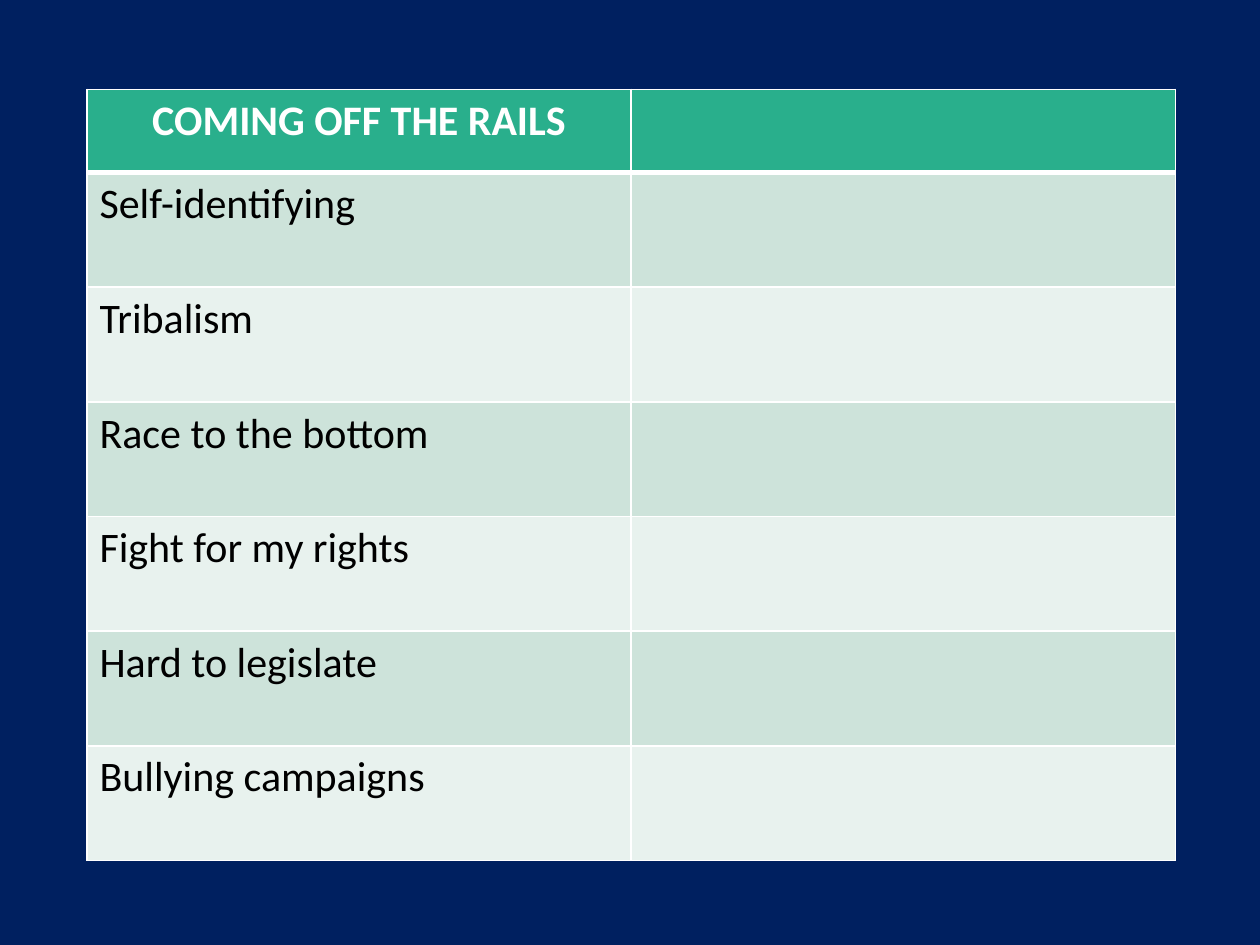
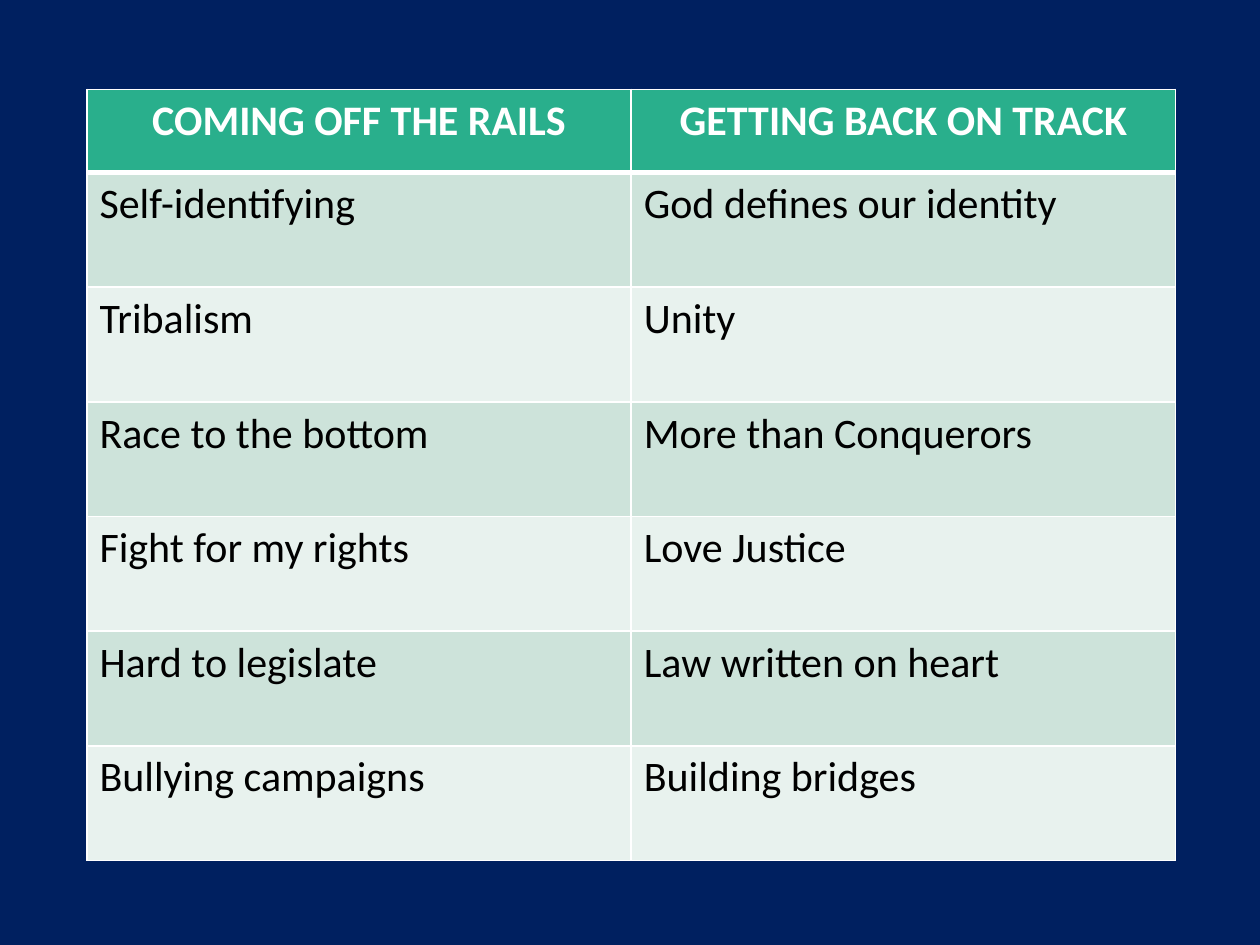
from lxml import etree
from pptx import Presentation
from pptx.dml.color import RGBColor
from pptx.enum.text import PP_ALIGN
from pptx.oxml.ns import qn
from pptx.util import Inches, Pt

CENTER, LEFT = PP_ALIGN.CENTER, PP_ALIGN.LEFT

NAVY, GREEN, WHITE, BLACK = "002060", "29AF8C", "FFFFFF", "000000"
BANDS = ["CDE3DA", "E8F2EE"]
FONT = "Calibri"
HEADER_HEIGHT, ROW_HEIGHT, COLUMN_WIDTH = 0.66, 0.91, 4.32

OFF_THE_RAILS = [
    "COMING OFF THE RAILS",
    "Self-identifying",
    "Tribalism",
    "Race to the bottom",
    "Fight for my rights",
    "Hard to legislate",
    "Bullying campaigns",
]
BACK_ON_TRACK = [
    "GETTING BACK ON TRACK",
    "God defines our identity",
    "Unity",
    "More than Conquerors",
    "Love Justice",
    "Law written on heart",
    "Building bridges",
]
NOT_YET_SHOWN = [""] * len(OFF_THE_RAILS)


def color(hex_string):
    return RGBColor.from_string(hex_string)


def add_border(cell, side, points):
    """Draw one white cell edge; side is L, R, T or B."""
    line = etree.SubElement(cell._tc.get_or_add_tcPr(), qn(f"a:ln{side}"), w=str(Pt(points)))
    fill = etree.SubElement(line, qn("a:solidFill"))
    etree.SubElement(fill, qn("a:srgbClr"), val=WHITE)


deck = Presentation()
deck.slide_width, deck.slide_height = Inches(10), Inches(7.5)

for right_column in (NOT_YET_SHOWN, BACK_ON_TRACK):
    page = deck.slides.add_slide(deck.slide_layouts[6])
    page.background.fill.solid()
    page.background.fill.fore_color.rgb = color(NAVY)

    columns = [OFF_THE_RAILS, right_column]
    row_count = len(OFF_THE_RAILS)
    table_height = HEADER_HEIGHT + (row_count - 1) * ROW_HEIGHT
    table = page.shapes.add_table(
        row_count, len(columns), Inches(0.69), Inches(0.71),
        Inches(len(columns) * COLUMN_WIDTH), Inches(table_height)).table
    for row_index, row in enumerate(table.rows):
        row.height = Inches(ROW_HEIGHT if row_index else HEADER_HEIGHT)

    for column_index, texts in enumerate(columns):
        table.columns[column_index].width = Inches(COLUMN_WIDTH)
        for row_index, text in enumerate(texts):
            is_header = row_index == 0
            cell = table.cell(row_index, column_index)
            edges = {"L": 1, "R": 1, "T": 3 if row_index == 1 else 1, "B": 3 if is_header else 1}
            for side, points in edges.items():
                add_border(cell, side, points)
            cell.fill.solid()
            cell.fill.fore_color.rgb = color(GREEN if is_header else BANDS[(row_index - 1) % 2])
            if text:
                para = cell.text_frame.paragraphs[0]
                para.alignment = CENTER if is_header else LEFT
                span = para.add_run()
                span.text = text
                span.font.name = FONT
                span.font.size = Pt(24)
                span.font.bold = is_header
                span.font.color.rgb = color(WHITE if is_header else BLACK)

deck.save("out.pptx")
